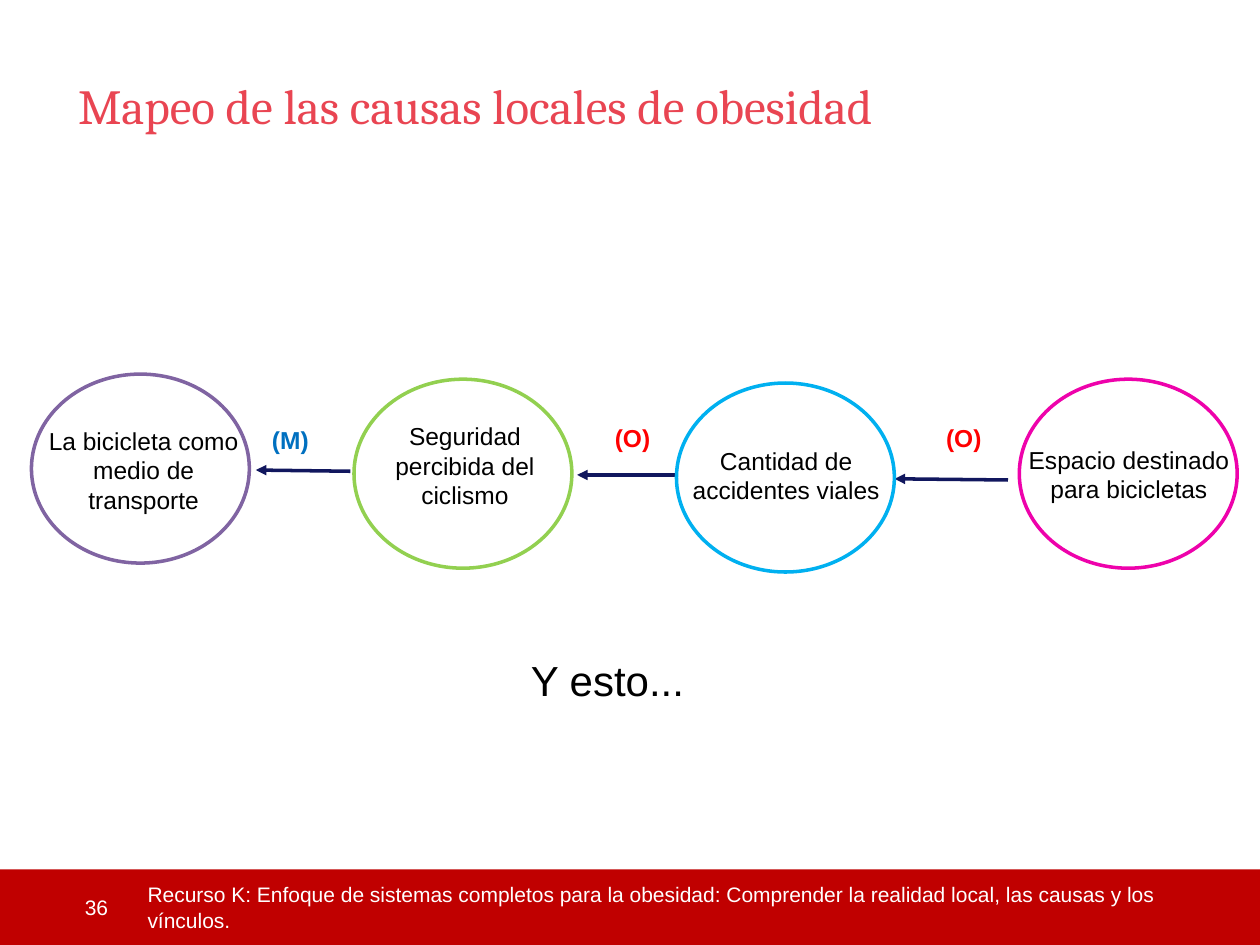
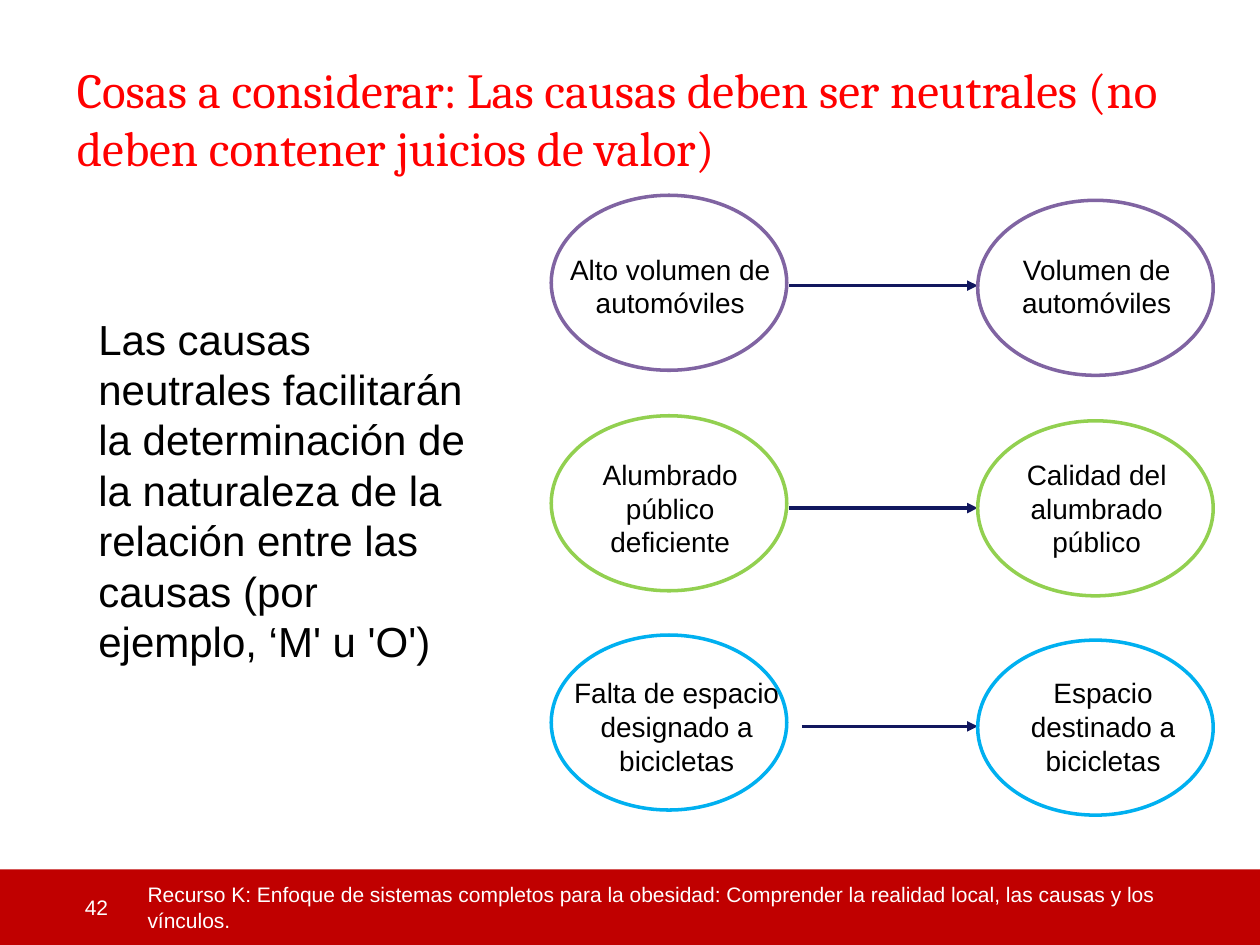
"""Builds two slides on mapping the local causes of obesity."""
from dataclasses import dataclass

from lxml.etree import SubElement as Sub
from pptx import Presentation as Deck
from pptx.dml.color import RGBColor as Color
from pptx.enum.shapes import MSO_CONNECTOR as Wire, MSO_SHAPE as Kind
from pptx.enum.text import MSO_ANCHOR as Anchor, MSO_AUTO_SIZE as Auto, PP_ALIGN as Align
from pptx.oxml.ns import qn
from pptx.slide import Slide
from pptx.text.text import TextFrame as Frame
from pptx.util import Pt

WHITE = Color(0xFF, 0xFF, 0xFF)
BLACK = Color(0x00, 0x00, 0x00)
BAND = Color(0xC0, 0x00, 0x00)
CORAL = Color(0xE9, 0x45, 0x52)
RED = Color(0xFF, 0x00, 0x00)
BLUE = Color(0x00, 0x70, 0xC0)
NAVY = Color(0x11, 0x17, 0x5E)
PURPLE = Color(0x80, 0x64, 0xA2)
GREEN = Color(0x92, 0xD0, 0x50)
SKY = Color(0x00, 0xB0, 0xF0)
PINK = Color(0xEE, 0x02, 0xAB)
SOURCE = ("Recurso K: Enfoque de sistemas completos para la obesidad: "
          "Comprender la realidad local, las causas y los vínculos.")


@dataclass(frozen=True)
class Box:
    left: float
    top: float
    width: float
    height: float

    @property
    def right(self) -> float:
        return self.left + self.width

    @property
    def middle(self) -> float:
        return self.top + self.height / 2

    def spans(self) -> tuple:
        return tuple(Pt(v) for v in (self.left, self.top, self.width, self.height))


@dataclass(frozen=True)
class Style:
    size: float
    color: Color = BLACK
    font: str = "Arial"
    bold: bool = False
    align: Align = Align.LEFT
    anchor: Anchor = Anchor.MIDDLE


@dataclass(frozen=True)
class Cause:
    text: str
    color: Color
    ring: Box
    label: Box


@dataclass(frozen=True)
class Tag:
    text: str
    color: Color
    box: Box
    space: float = 1.0


SMALL = Style(12, WHITE)


def write(frame: Frame, text: str, style: Style, wrap: bool = True) -> None:
    frame.word_wrap = wrap
    frame.auto_size = Auto.NONE
    frame.vertical_anchor = style.anchor
    para = frame.paragraphs[0]
    para.alignment = style.align
    run = para.add_run()
    run.text = text
    font = run.font
    font.name, font.size, font.bold = style.font, Pt(style.size), style.bold
    font.color.rgb = style.color


def inset(frame: Frame, left: float = 0) -> None:
    frame.margin_left = Pt(left)
    frame.margin_top = frame.margin_right = frame.margin_bottom = 0


def place(shape, box: Box) -> None:
    shape.left, shape.top, shape.width, shape.height = box.spans()


def add_text(slide: Slide, text: str, box: Box, style: Style, wrap: bool = True) -> Frame:
    frame = slide.shapes.add_textbox(*box.spans()).text_frame
    write(frame, text, style, wrap)
    return frame


def add_band(slide: Slide, number: int) -> None:
    band = slide.shapes.add_shape(Kind.RECTANGLE, *Box(0, 496.8, 720, 43.2).spans())
    band.shadow.inherit = False
    band.fill.solid()
    band.fill.fore_color.rgb = BAND
    band.line.fill.background()
    inset(band.text_frame, 48.5)
    write(band.text_frame, str(number), SMALL)
    inset(add_text(slide, SOURCE, Box(70.6, 496.8, 635, 43.2), SMALL), 13.7)


def add_title(slide: Slide, text: str, box: Box, color: Color) -> None:
    title = slide.shapes.title
    place(title, box)
    inset(title.text_frame)
    write(title.text_frame, text, Style(28, color, "Cambria", anchor=Anchor.TOP))


def add_body(slide: Slide, text: str, box: Box, align: Align) -> None:
    body = slide.placeholders[1]
    place(body, box)
    write(body.text_frame, text, Style(24, align=align))
    para = body.text_frame.paragraphs[0]
    para.space_before = Pt(0)
    props = para._p.get_or_add_pPr()
    props.set("marL", "0")
    props.set("indent", "0")
    Sub(props, qn("a:buNone"))


def add_arrow(slide: Slide, start: tuple[float, float], end: tuple[float, float]) -> None:
    ends = (Pt(v) for v in start + end)
    arrow = slide.shapes.add_connector(Wire.STRAIGHT, *ends)
    arrow.line.color.rgb = NAVY
    arrow.line.width = Pt(2)
    Sub(arrow.line._get_or_add_ln(), qn("a:tailEnd"), type="triangle")
    Sub(arrow._element.spPr, qn("a:effectLst"))


def add_cause(slide: Slide, cause: Cause, size: float) -> None:
    ring = slide.shapes.add_shape(Kind.OVAL, *cause.ring.spans())
    ring.shadow.inherit = False
    ring.fill.background()
    ring.line.color.rgb = cause.color
    ring.line.width = Pt(2)
    add_text(slide, cause.text, cause.label, Style(size, align=Align.CENTER))


def add_tag(slide: Slide, tag: Tag) -> None:
    frame = add_text(slide, tag.text, tag.box,
                     Style(14, tag.color, bold=True, anchor=Anchor.TOP), wrap=False)
    frame.paragraphs[0].line_spacing = tag.space


def start(deck: Deck, number: int, title: str, box: Box, color: Color) -> Slide:
    slide = deck.slides.add_slide(deck.slide_layouts[1])
    add_band(slide, number)
    add_title(slide, title, box, color)
    return slide


def draw_chain(deck: Deck) -> None:
    slide = start(deck, 36, "Mapeo de las causas locales de obesidad",
                  Box(44.6, 43.2, 632, 51), CORAL)
    add_body(slide, "Y esto...", Box(167.8, 360.7, 358.6, 55.4), Align.CENTER)
    wide, high = 124.5, 108
    causes = (
        Cause("La bicicleta como medio de transporte", PURPLE,
              Box(18, 213.8, wide, high), Box(18, 213.1, 128.2, 110.9)),
        Cause("Seguridad percibida del ciclismo", GREEN,
              Box(202.3, 216.7, wide, high), Box(201.6, 205.9, 128.2, 120.2)),
        Cause("Cantidad de accidentes viales", SKY,
              Box(386.6, 218.9, wide, high), Box(388.1, 216.7, 122.4, 109.4)),
        Cause("Espacio destinado para bicicletas", PINK,
              Box(582.5, 216.7, wide, high), Box(578.2, 216.7, 133.9, 108.7)),
    )
    arrows = (
        ((200.2, 269.3), (146.2, 268.6)),
        ((387.4, 271.4), (329.8, 271.4)),
        ((576, 274.3), (511.2, 273.6)),
    )
    tags = (
        Tag("(M)", BLUE, Box(148.3, 231.1, 35.3, 29.5), 1.5),
        Tag("(O)", RED, Box(344.2, 238.3, 34.6, 23.8)),
        Tag("(O)", RED, Box(533.5, 238.3, 34.6, 23.8)),
    )
    for tail, head in arrows:
        add_arrow(slide, tail, head)
    for tag in tags:
        add_tag(slide, tag)
    for cause in causes:
        add_cause(slide, cause, 14)


def draw_pairs(deck: Deck) -> None:
    slide = start(deck, 42, "Cosas a considerar: Las causas deben ser neutrales "
                  "(no deben contener juicios de valor)",
                  Box(43.9, 33.8, 632, 82.8), RED)
    add_body(slide, "Las causas neutrales facilitarán la determinación de la naturaleza "
             "de la relación entre las causas (por ejemplo, ‘M' u 'O')",
             Box(49, 172.1, 231.1, 215.3), Align.LEFT)
    first, last, drop = 315, 558.7, 2.9
    rows = (
        ("Alto volumen de automóviles", "Volumen de automóviles",
         PURPLE, 111.6, Box(first, 111.2, 136, 104)),
        ("Alumbrado público deficiente", "Calidad del alumbrado público",
         GREEN, 237.6, Box(first, 238.3, 136, 104)),
        ("Falta de espacio designado a bicicletas", "Espacio destinado a bicicletas",
         SKY, 362.9, Box(first, 360.7, 143.3, 108.7)),
    )
    for biased, plain, color, top, label in rows:
        add_arrow(slide, (label.right, label.middle), (last, label.middle))
        for text, left, shift in ((biased, first, 0), (plain, last, drop)):
            ring = Box(left, top + shift, 134.6, 100)
            spot = Box(left, label.top, label.width, label.height)
            add_cause(slide, Cause(text, color, ring, spot), 16)


def main() -> None:
    deck = Deck()
    deck.slide_width, deck.slide_height = Pt(720), Pt(540)
    draw_chain(deck)
    draw_pairs(deck)
    deck.save("out.pptx")


if __name__ == "__main__":
    main()
